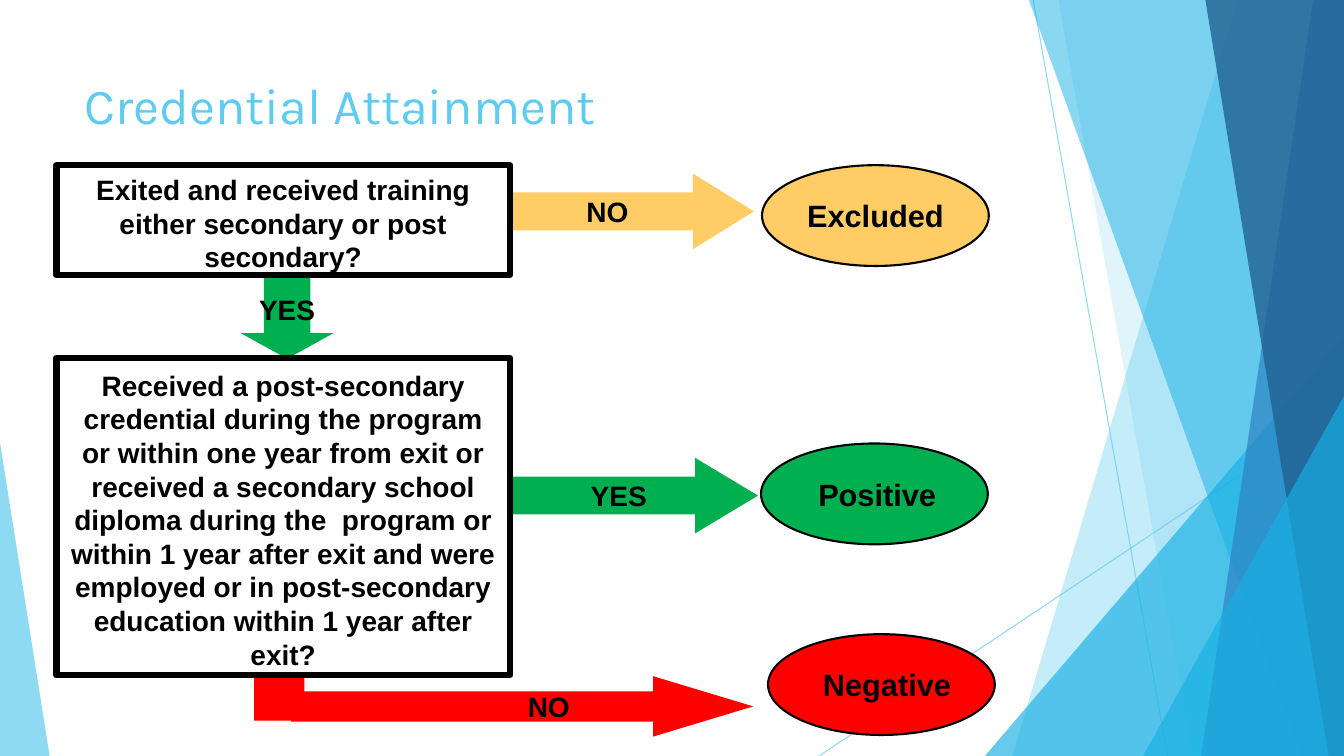
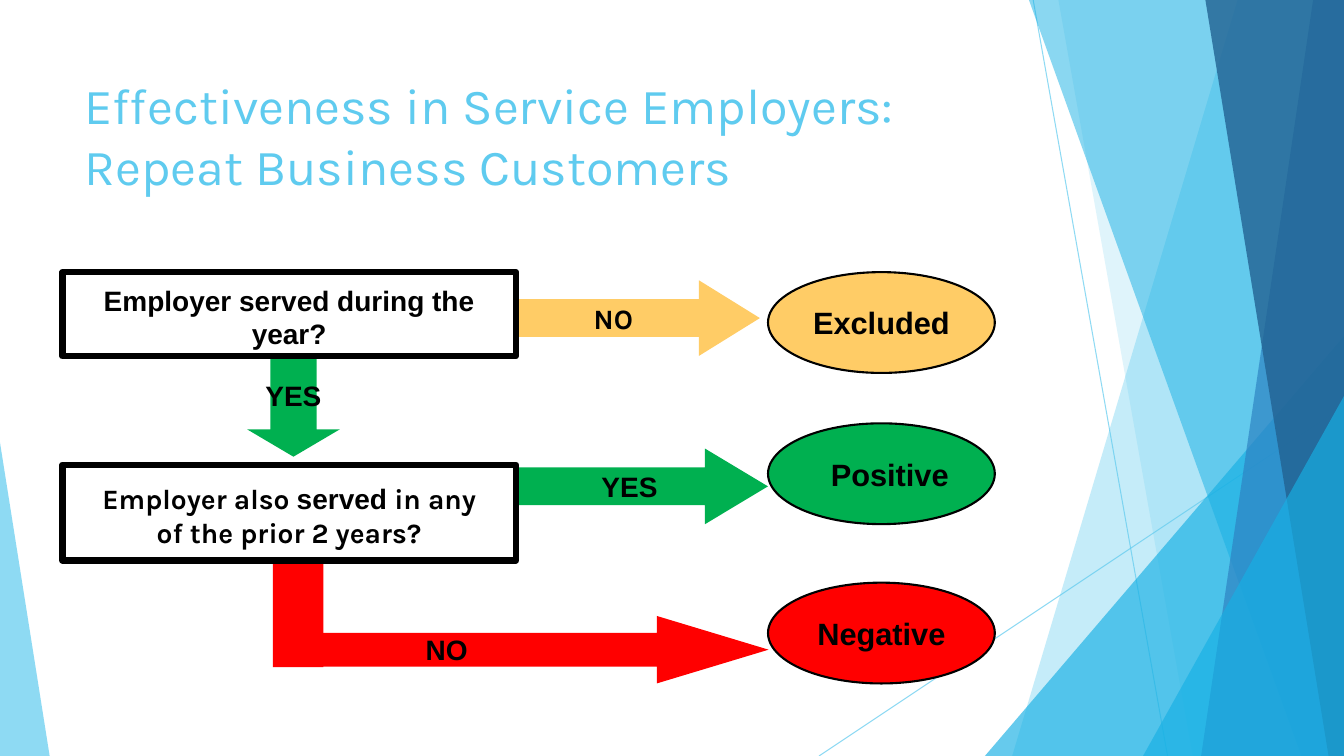
from dataclasses import dataclass

from lxml import etree
from pptx import Presentation
from pptx.dml.color import RGBColor
from pptx.enum.shapes import MSO_CONNECTOR, MSO_SHAPE
from pptx.enum.text import MSO_ANCHOR, PP_ALIGN
from pptx.oxml.ns import qn
from pptx.util import Pt

RECTANGLE, OVAL = MSO_SHAPE.RECTANGLE, MSO_SHAPE.OVAL
RIGHT_ARROW, DOWN_ARROW = MSO_SHAPE.RIGHT_ARROW, MSO_SHAPE.DOWN_ARROW
TRIANGLE, STRAIGHT = MSO_SHAPE.ISOSCELES_TRIANGLE, MSO_CONNECTOR.STRAIGHT
LEFT, CENTER = PP_ALIGN.LEFT, PP_ALIGN.CENTER
TOP, MIDDLE = MSO_ANCHOR.TOP, MSO_ANCHOR.MIDDLE


@dataclass(frozen=True)
class Theme:
    sky: str = "5FCBEF"
    cyan: str = "17B0E4"
    blue: str = "2E83C3"
    navy: str = "226292"
    ink: str = "000000"
    paper: str = "FFFFFF"
    excluded: str = "FFCC66"
    positive: str = "00B050"
    negative: str = "FF0000"
    heading_font: str = "Karla"
    body_font: str = "Arial"
    title_size: int = 36
    outcome_size: int = 22
    body_size: int = 20
    line_height: float = 1.2


THEME = Theme()
WIDTH, HEIGHT = 960, 540


def paint(shape, fill, alpha=None, outline=None):
    shape.shadow.inherit = False
    shape.fill.solid()
    shape.fill.fore_color.rgb = RGBColor.from_string(fill)
    if alpha:
        color = shape.element.spPr.find(".//" + qn("a:srgbClr"))
        etree.SubElement(color, qn("a:alpha"), val=str(alpha * 1000))
    if outline:
        shape.line.color.rgb = RGBColor.from_string(THEME.ink)
        shape.line.width = Pt(outline)
    else:
        shape.line.fill.background()
    return shape


def write(shape, text, size=THEME.body_size, font=THEME.body_font, color=THEME.ink,
          bold=True, align=CENTER, anchor=MIDDLE, insets=(0, 0, 0, 0), wrap=True):
    frame = shape.text_frame
    frame.word_wrap = wrap
    frame.vertical_anchor = anchor
    frame.margin_left, frame.margin_top, frame.margin_right, frame.margin_bottom = map(Pt, insets)
    paragraph = frame.paragraphs[0]
    paragraph.alignment = align
    paragraph.line_spacing = Pt(size * THEME.line_height)
    for words, run_font in [(text, font)] if isinstance(text, str) else text:
        run = paragraph.add_run()
        run.text = words
        run.font.name = run_font
        run.font.size = Pt(size)
        run.font.bold = bold
        run.font.color.rgb = RGBColor.from_string(color)


deck = Presentation()
deck.slide_width, deck.slide_height = Pt(WIDTH), Pt(HEIGHT)
blank = deck.slide_layouts[6]
backdrop = blank.shapes.element

RAYS = [(738, 0, 834, HEIGHT), (WIDTH, 290, 585, HEIGHT)]
FACETS = [
    ("band", (884, 723), THEME.sky, 36),
    ("band", (756, 852), THEME.sky, 20),
    ("triangle", (703.5, 240, 256.5, 300, 1), THEME.cyan, 66),
    ("band", (735, 929.5), THEME.cyan, 50),
    ("band", (938, 858), THEME.blue, 70),
    ("band", (861, 949), THEME.navy, 80),
    ("triangle", (816.5, 283, 143.5, 257, 1), THEME.cyan, 66),
    ("triangle", (0, 316, 35.5, 224, 0), THEME.sky, 70),
]

FLOWS = [
    {
        "title": "Credential Attainment",
        "arrows": [
            (RIGHT_ARROW, (208, 483, 330, 43.2), 1.656, THEME.negative, "NO", THEME.body_font, 169),
            (RIGHT_ARROW, (361.5, 327, 180, 54), 0.833, THEME.positive, "YES", THEME.body_font, 60.5),
            (DOWN_ARROW, (172, 194.3, 66.2, 62), 0.295, THEME.positive, "YES", THEME.body_font, 0),
            (RIGHT_ARROW, (364.3, 124, 174.2, 54), 0.806, THEME.excluded, "NO", THEME.body_font, 54.5),
        ],
        "elbow": (181.5, 432, 36, 82.8),
        "questions": [
            ((40.3, 118, 324, 78.5), 19,
             "Exited and received training either secondary or post secondary?"),
            ((40.3, 255.6, 324, 226.8), 7.2,
             "Received a post-secondary credential during the program or within one year "
             "from exit or received a secondary school diploma during the  program or "
             "within 1 year after exit and were employed or in post-secondary education "
             "within 1 year after exit?"),
        ],
        "outcomes": [
            ("Excluded", 544.3, 118, THEME.excluded, 0),
            ("Positive", 543.6, 316.8, THEME.positive, 2),
            ("Negative", 548.6, 453, THEME.negative, 4),
        ],
    },
    {
        "title": "Effectiveness in Service Employers: Repeat Business Customers",
        "arrows": [
            (RIGHT_ARROW, (219, 440, 330, 48.2), 1.656, THEME.negative, "NO", THEME.body_font, 85),
            (RIGHT_ARROW, (368.6, 320.4, 180, 54), 0.833, THEME.positive, "YES", THEME.body_font, 61),
            (DOWN_ARROW, (176.5, 248.4, 66.2, 77.8), 0.295, THEME.positive, "YES", THEME.body_font, 0),
            (RIGHT_ARROW, (368.6, 200.2, 174.2, 54), 0.806, THEME.excluded, "NO", THEME.heading_font, 55.5),
        ],
        "elbow": (195, 392.4, 36, 84.2),
        "questions": [
            ((44.6, 194.4, 324, 60), 19, "Employer served during the year?"),
            ((44.6, 332, 324, 68.4), 25,
             [("Employer also ", THEME.heading_font), ("served", THEME.body_font),
              (" in any of the prior 2 years?", THEME.heading_font)]),
        ],
        "outcomes": [
            ("Excluded", 548.6, 194.4, THEME.excluded, 0),
            ("Positive", 548.6, 302.4, THEME.positive, 6),
            ("Negative", 548.6, 416.2, THEME.negative, 0),
        ],
    },
]

for number, flow in enumerate(FLOWS):
    shapes = deck.slides.add_slide(blank).shapes

    if number == 0:
        for ends in RAYS:
            ray = shapes.add_connector(STRAIGHT, *map(Pt, ends))
            ray.line.color.rgb = RGBColor.from_string(THEME.sky)
            ray.line.width = Pt(0.75)
            ray_color = ray.element.spPr.find(".//" + qn("a:srgbClr"))
            etree.SubElement(ray_color, qn("a:alpha"), val="70000")
            etree.SubElement(ray.element.spPr, qn("a:effectLst"))
            backdrop.append(ray.element)
        for kind, geometry, color, alpha in FACETS:
            if kind == "band":
                top_x, bottom_x = geometry
                outline = shapes.build_freeform(Pt(top_x), 0)
                corners = [(WIDTH, 0), (WIDTH, HEIGHT), (bottom_x, HEIGHT)]
                outline.add_line_segments([(Pt(x), Pt(y)) for x, y in corners], close=True)
                facet = outline.convert_to_shape()
            else:
                *place, apex = geometry
                facet = shapes.add_shape(TRIANGLE, *map(Pt, place))
                facet.adjustments[0] = apex
            paint(facet, color, alpha)
            backdrop.append(facet.element)

    heading = shapes.add_textbox(*map(Pt, (53.3, 48.2, 676.8, 104)))
    write(heading, flow["title"], size=THEME.title_size, font=THEME.heading_font,
          color=THEME.sky, bold=False, align=LEFT, anchor=TOP, insets=(7.2, 5, 7.2, 3.6))

    paint(shapes.add_shape(RECTANGLE, *map(Pt, flow["elbow"])), THEME.negative)

    for direction, place, head, color, answer, font, indent in flow["arrows"]:
        arrow = paint(shapes.add_shape(direction, *map(Pt, place)), color)
        arrow.adjustments[0] = 0.5
        arrow.adjustments[1] = head
        points_right = direction == RIGHT_ARROW
        write(arrow, answer, font=font, align=LEFT if points_right else CENTER,
              insets=(indent, 0, 0, 0), wrap=points_right)

    for place, side, question in flow["questions"]:
        box = paint(shapes.add_shape(RECTANGLE, *map(Pt, place)), THEME.paper, outline=4.5)
        write(box, question, insets=(side, 4, side, 0))

    for outcome, left, top, color, shift in flow["outcomes"]:
        ellipse = paint(shapes.add_shape(OVAL, Pt(left), Pt(top), Pt(162), Pt(72)), color, outline=1.5)
        write(ellipse, outcome, size=THEME.outcome_size, insets=(2 * shift, 0, 0, 0))

deck.save("out.pptx")
